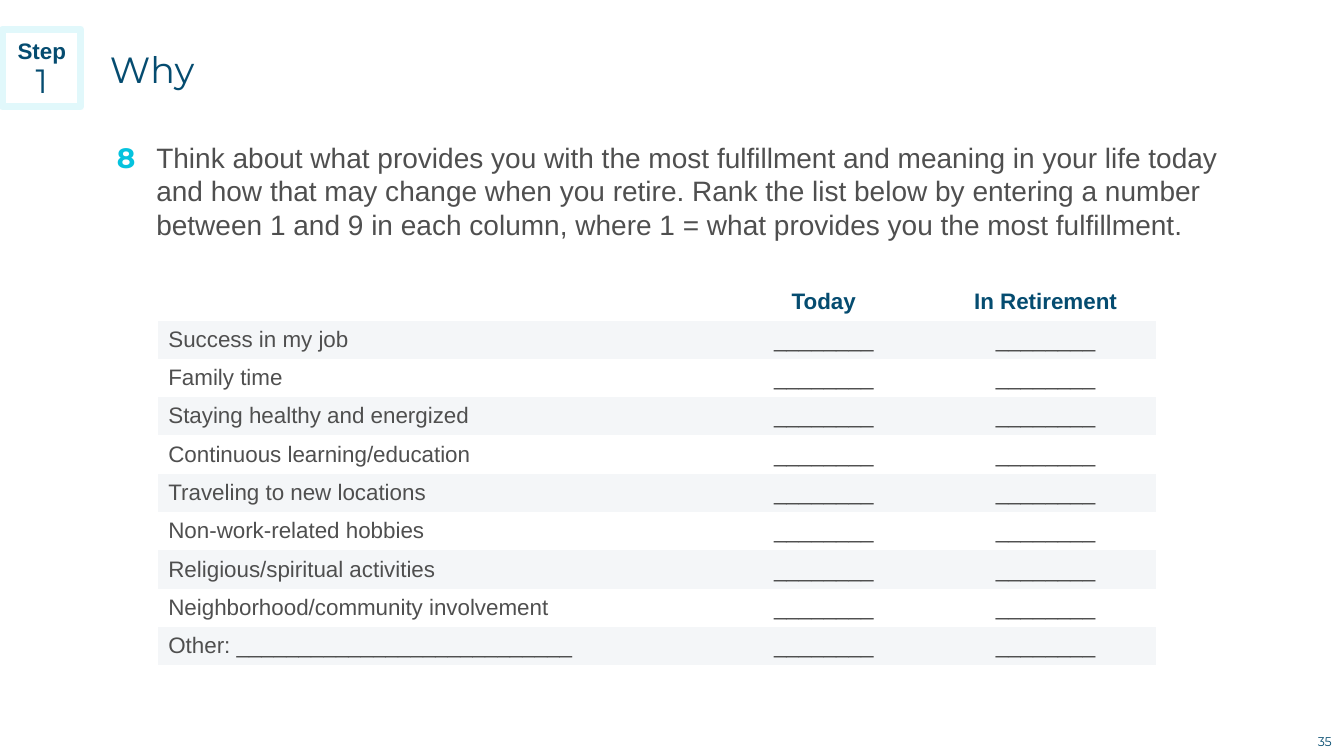
import pptx
import pptx.util
import pptx.dml.color
import pptx.enum.shapes
import pptx.enum.text
from pptx.util import Inches

RGBColor = pptx.dml.color.RGBColor
Align = pptx.enum.text.PP_ALIGN
Anchor = pptx.enum.text.MSO_ANCHOR

NAVY = RGBColor(0x05, 0x4C, 0x70)
GRAY = RGBColor(0x4F, 0x4F, 0x4F)
CYAN = RGBColor(0x05, 0xC3, 0xDE)
PALE_CYAN = RGBColor(0xE1, 0xF8, 0xFB)
BAND = RGBColor(0xF4, 0xF6, 0xF8)
WHITE = RGBColor(0xFF, 0xFF, 0xFF)

BODY_FONT = "Arial"
HEAD_FONT = "Montserrat"
PLAIN_TABLE_STYLE = "{2D5ABB26-0587-4C30-8999-92F81FD0307C}"

BLANK = "_" * 8
ACTIVITIES = [
    "Success in my job",
    "Family time",
    "Staying healthy and energized",
    "Continuous learning/education",
    "Traveling to new locations",
    "Non-work-related hobbies",
    "Religious/spiritual activities",
    "Neighborhood/community involvement",
    "Other: " + "_" * 27,
]


class Worksheet:
    """Holds the current slide and draws its elements in one style."""

    def __init__(self, page):
        self.page = page

    def style(self, para, size, color, name=BODY_FONT, bold=False, align=Align.LEFT):
        para.alignment = align
        para.font.size = pptx.util.Pt(size)
        para.font.name = name
        para.font.bold = bold
        para.font.color.rgb = color

    def frame(self, shape, margins, anchor):
        frame = shape.text_frame
        frame.word_wrap = True
        frame.vertical_anchor = anchor
        (frame.margin_left, frame.margin_top,
         frame.margin_right, frame.margin_bottom) = map(Inches, margins)
        return frame

    def title(self, place, text):
        title = self.page.shapes.title
        title.left, title.top, title.width, title.height = map(Inches, place)
        frame = self.frame(title, (0, 0.05, 0.1, 0.05), Anchor.MIDDLE)
        frame.text = text
        self.style(frame.paragraphs[0], 26, NAVY, HEAD_FONT)

    def text(self, place, text, size, color, anchor=Anchor.TOP, **look):
        box = self.page.shapes.add_textbox(*map(Inches, place))
        frame = self.frame(box, (0, 0, 0, 0), anchor)
        frame.text = text
        self.style(frame.paragraphs[0], size, color, **look)

    def step_badge(self, place, label, number):
        badge = self.page.shapes.add_shape(
            pptx.enum.shapes.MSO_SHAPE.RECTANGLE, *map(Inches, place))
        badge.shadow.inherit = False
        badge.fill.solid()
        badge.fill.fore_color.rgb = WHITE
        badge.line.color.rgb = PALE_CYAN
        badge.line.width = pptx.util.Pt(5)
        frame = self.frame(badge, (0, 0.05, 0, 0), Anchor.MIDDLE)
        frame.text = f"{label}\n{number}"
        top, bottom = frame.paragraphs
        self.style(top, 16, NAVY, bold=True, align=Align.CENTER)
        self.style(bottom, 24, NAVY, HEAD_FONT, align=Align.CENTER)
        top.line_spacing = bottom.line_spacing = 0.9

    def table(self, left, top, widths, row_height, rows):
        holder = self.page.shapes.add_table(
            len(rows), len(widths), Inches(left), Inches(top),
            Inches(sum(widths)), Inches(row_height * len(rows)))
        table = holder.table
        table.first_row = table.horz_banding = False
        properties = table._tbl.tblPr
        properties.find(pptx.oxml.ns.qn("a:tableStyleId")).text = PLAIN_TABLE_STYLE
        for column, width in zip(table.columns, widths):
            column.width = Inches(width)
        for r, row in enumerate(rows):
            table.rows[r].height = Inches(row_height)
            for c, text in enumerate(row):
                cell = table.cell(r, c)
                cell.text = text
                cell.vertical_anchor = Anchor.MIDDLE
                if r % 2:
                    cell.fill.solid()
                    cell.fill.fore_color.rgb = BAND
                else:
                    cell.fill.background()
                header = r == 0
                self.style(cell.text_frame.paragraphs[0], 16,
                           NAVY if header else GRAY, bold=header,
                           align=Align.CENTER if c else Align.LEFT)


def main():
    deck = pptx.Presentation()
    deck.slide_width, deck.slide_height = Inches(13.33), Inches(7.5)
    sheet = Worksheet(deck.slides.add_slide(deck.slide_layouts[5]))

    # Heading
    sheet.title((1.09, 0.28, 11.16, 0.81), "Why")
    sheet.step_badge((0.03, 0.29, 0.77, 0.77), "Step", "1")

    # Numbered question
    sheet.text((1.16, 1.39, 0.4, 0.34), "8", 20, CYAN, name=HEAD_FONT, bold=True)
    sheet.text(
        (1.55, 1.39, 10.61, 1.01),
        "Think about what provides you with the most fulfillment and meaning in "
        "your life today and how that may change when you retire. Rank the list "
        "below by entering a number between 1 and 9 in each column, where 1 = what "
        "provides you the most fulfillment.", 20, GRAY)

    # Ranking table
    rows = [("", "Today", "In Retirement")]
    rows += [(activity, BLANK, BLANK) for activity in ACTIVITIES]
    sheet.table(1.57, 2.8, (5.5, 2.2, 2.2), 0.38, rows)

    # Page number
    sheet.text((12.97, 7.23, 0.34, 0.25), "35", 9, NAVY, Anchor.MIDDLE,
               name=HEAD_FONT, align=Align.CENTER)

    deck.save("out.pptx")


if __name__ == "__main__":
    main()
